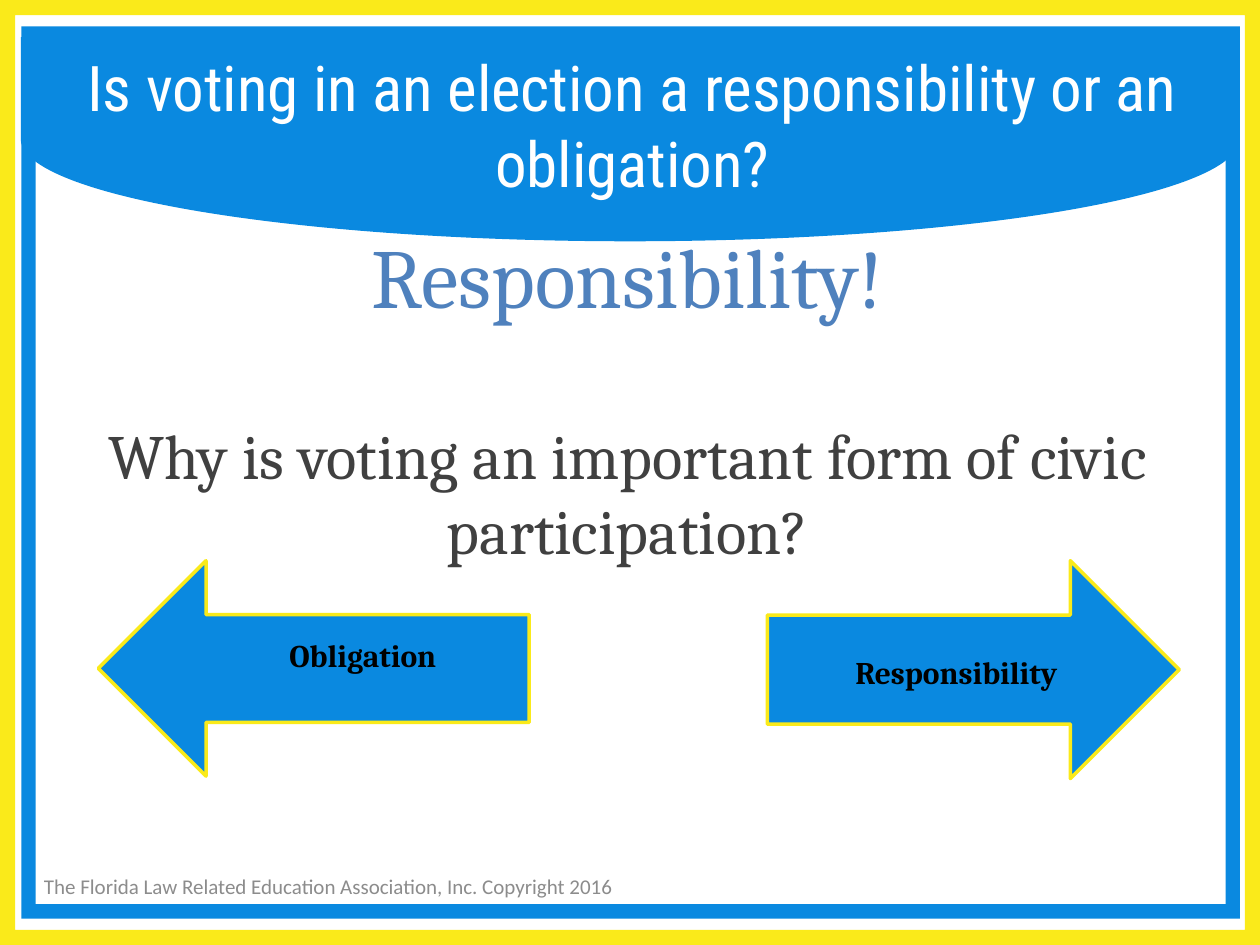
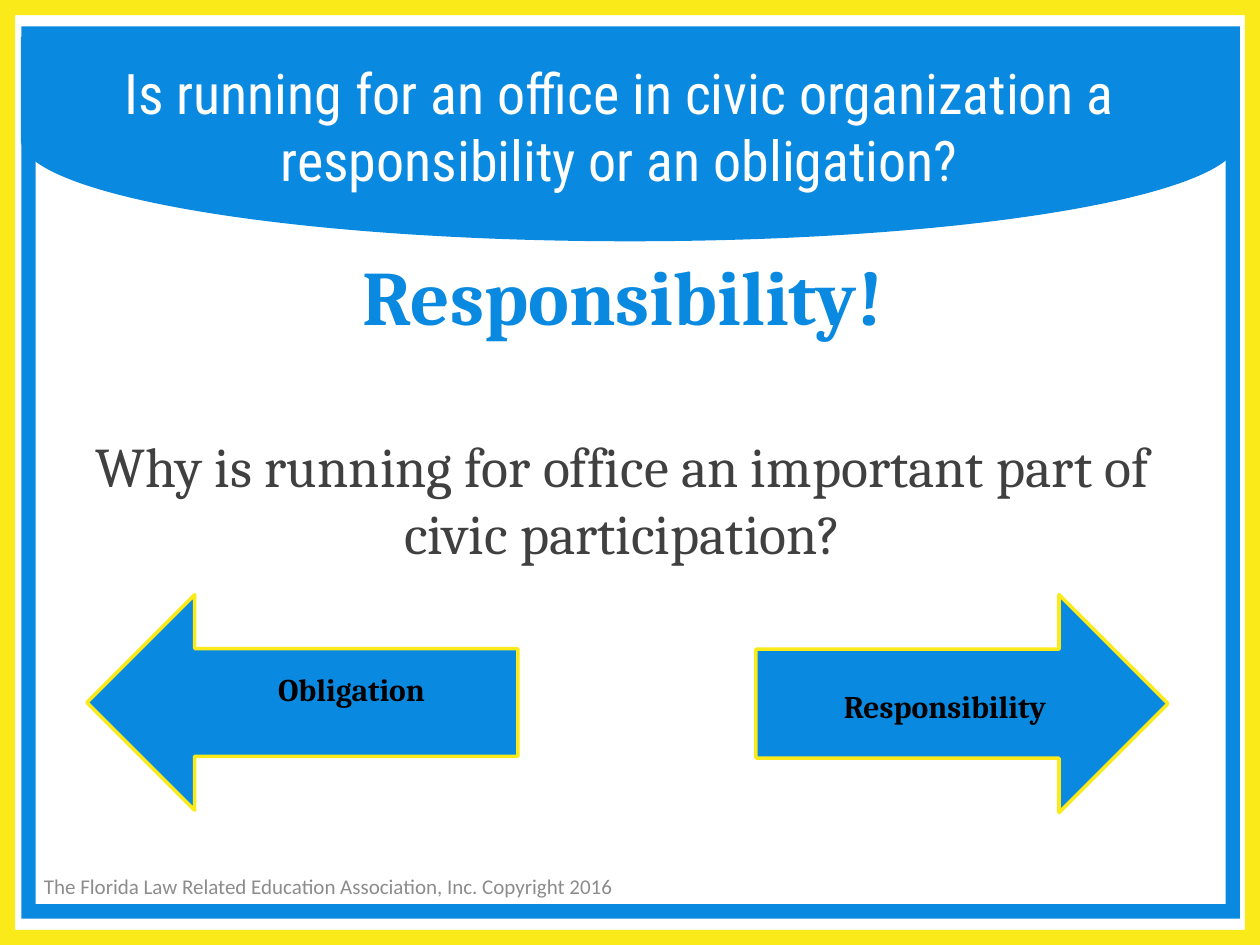
from dataclasses import dataclass
from lxml import etree
from pptx import Presentation
from pptx.dml.color import RGBColor
from pptx.enum import shapes, text
from pptx.oxml.ns import qn
from pptx.util import Inches, Pt


@dataclass(frozen=True)
class Theme:
    blue: str = "0A89E0"
    yellow: str = "FAEA1A"
    steel: str = "4F81BD"
    dark: str = "404040"
    gray: str = "8C8C8C"
    black: str = "000000"
    white: str = "FFFFFF"
    head: str = "Roboto Condensed"
    serif: str = "Cambria"
    sans: str = "Calibri"
    label: int = 18
    note: int = 12
    gap: int = 52


T = Theme()
KIND = shapes.MSO_SHAPE
MID = text.MSO_ANCHOR.MIDDLE
FOOTER = "The Florida Law Related Education Association, Inc. Copyright 2016"


def place(shape, box):
    shape.left, shape.top, shape.width, shape.height = map(Inches, box)


def write(para, words, size, color, font=T.serif, bold=False,
          align=text.PP_ALIGN.CENTER, before=0):
    para.alignment = align
    para.space_before = Pt(before)
    run = para.add_run()
    run.text = words
    run.font.name, run.font.size, run.font.bold = font, Pt(size), bold
    run.font.color.rgb = RGBColor.from_string(color)


def plain(para):
    """Turn off the bullet and set the small left margin."""
    props = para._p.get_or_add_pPr()
    props.set("marL", str(Inches(0.05)))
    props.set("indent", "0")
    etree.SubElement(props, qn("a:buNone"))


def frame(holder, box, anchor):
    place(holder, box)
    area = holder.text_frame
    area.word_wrap = True
    area.auto_size = text.MSO_AUTO_SIZE.NONE
    area.vertical_anchor = anchor
    return area


def draw(slide, kind, box, fill, line=None, turn=0):
    shape = slide.shapes.add_shape(kind, *map(Inches, box))
    shape.shadow.inherit = False
    shape.rotation = turn
    shape.fill.solid()
    shape.fill.fore_color.rgb = RGBColor.from_string(fill)
    if line:
        shape.line.color.rgb = RGBColor.from_string(line)
        shape.line.width = Pt(2)
    else:
        shape.line.fill.background()
    return shape


def label(slide, box, words, size=T.label, anchor=text.MSO_ANCHOR.TOP, **style):
    area = frame(slide.shapes.add_textbox(0, 0, 0, 0), box, anchor)
    write(area.paragraphs[0], words, size, **style)


def border(slide, layout):
    """Draw the curved band and both frames, then hand them to the layout."""
    band = draw(slide, KIND.FLOWCHART_DELAY, (4.19, -3.73, 1.62, 9.67), T.blue, turn=90)
    outer = draw(slide, KIND.FRAME, (0, 0, 10, 7.5), T.yellow)
    inner = draw(slide, KIND.FRAME, (0.17, 0.21, 9.67, 7.08), T.blue)
    for edge in (outer, inner):
        edge.adjustments[0] = 0.016
    for spot, part in enumerate((band, outer, inner)):
        part._element.nvSpPr.cNvPr.set("id", str(100 + spot))
        layout.shapes._spTree.insert(2 + spot, part._element)


def title(slide, box, words, size):
    area = frame(slide.shapes.title, box, MID)
    write(area.paragraphs[0], words, size, T.white, font=T.head)


def body(slide, box, answer, query, size):
    area = frame(slide.placeholders[1], box, text.MSO_ANCHOR.TOP)
    first, second = area.paragraphs[0], area.add_paragraph()
    for para in (first, second):
        plain(para)
    write(first, "Responsibility!", **answer)
    write(second, query, size, T.dark, before=T.gap)


def arrows(slide, x, y):
    """Place the two choices with their top left corner at x, y."""
    style = dict(color=T.black, bold=True)
    draw(slide, KIND.RIGHT_ARROW, (x + 5.31, y, 3.27, 1.73), T.blue, T.yellow)
    draw(slide, KIND.RIGHT_ARROW, (x, y, 3.42, 1.71), T.blue, T.yellow, turn=180)
    label(slide, (x + 5.37, y + 0.68, 2.88, 0.4), "Responsibility", **style)
    label(slide, (x + 0.83, y + 0.55, 2.54, 0.4), "Obligation", **style)


def footer(slide):
    label(slide, (0.25, 6.83, 5.25, 0.4), FOOTER, T.note, MID, color=T.gray,
          font=T.sans, align=text.PP_ALIGN.LEFT)


PAGES = [
    dict(ask="Is voting in an election a responsibility or an obligation?",
         query="Why is voting an important form of civic participation?",
         size=36, top=(0.52, 0.36, 9, 1.25), main=(0.36, 1.73, 9.19, 4.82),
         answer=dict(size=48, color=T.steel), corner=(0.78, 4.45)),
    dict(ask="Is running for an office in civic organization a "
             "responsibility or an obligation?",
         query="Why is running for office an important part of civic participation?",
         size=32, top=(0.42, 0.37, 9, 1.25), main=(0.42, 1.92, 9, 4.75),
         answer=dict(size=44, color=T.blue, bold=True), corner=(0.69, 4.72)),
]


def main():
    deck = Presentation()
    deck.slide_width, deck.slide_height = Inches(10), Inches(7.5)
    layout = deck.slide_layouts[1]
    for count, page in enumerate(PAGES):
        slide = deck.slides.add_slide(layout)
        if count == 0:
            border(slide, layout)
        title(slide, page["top"], page["ask"], page["size"])
        body(slide, page["main"], page["answer"], page["query"], page["size"])
        arrows(slide, *page["corner"])
        footer(slide)
    deck.save("out.pptx")


if __name__ == "__main__":
    main()
